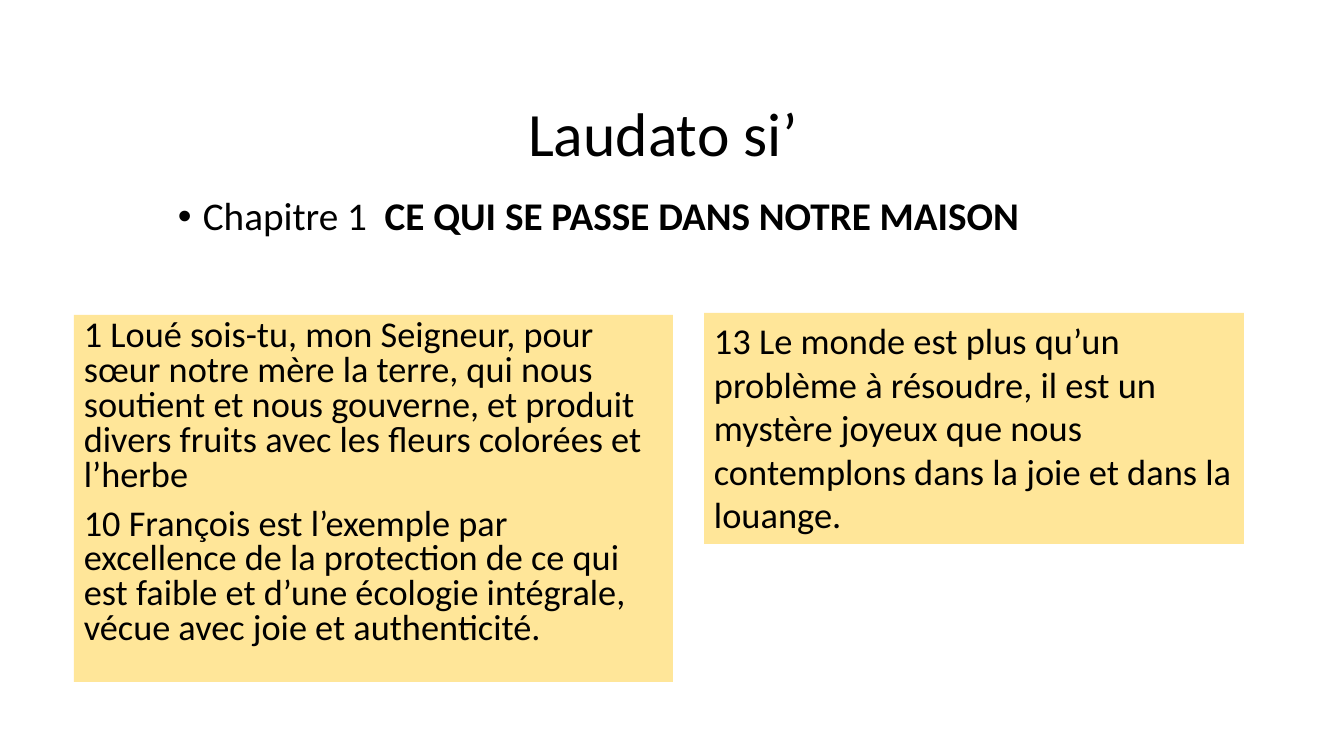
import pptx
import pptx.dml.color
import pptx.enum.shapes
import pptx.enum.text
import pptx.oxml
import pptx.util

BLACK = pptx.dml.color.RGBColor(0x00, 0x00, 0x00)
SAND = pptx.dml.color.RGBColor(0xFF, 0xE6, 0x99)
FONT = "Calibri"
EMU_PER_PX = 914400 / 100.8
SLIDE_SIZE = (1344, 756)
BULLET_INDENT = 25

TITLE = {"box": (159, 76, 1008, 122), "paragraphs": [[("Laudato si’", False)]]}
CHAPTER = {
    "box": (168, 192, 1008, 77),
    "paragraphs": [[("Chapitre 1  ", False), ("CE QUI SE PASSE DANS NOTRE MAISON", True)]],
}
QUOTES = [
    {
        "box": (74, 315, 599, 367),
        "paragraphs": [
            [("1 Loué sois-tu, mon Seigneur, pour sœur notre mère la terre, qui nous soutient "
              "et nous gouverne, et produit divers fruits avec les fleurs colorées et l’herbe", False)],
            [("10 François est l’exemple par excellence de la protection de ce qui est faible "
              "et d’une écologie intégrale, vécue avec joie et authenticité.", False)],
        ],
        "format": {"size": 25.9, "line_spacing": 0.8, "space_before": 10},
    },
    {
        "box": (704, 313, 540, 231),
        "paragraphs": [
            [("13 Le monde est plus qu’un problème à résoudre, il est un mystère joyeux que nous "
              "contemplons dans la joie et dans la louange.", False)],
        ],
        "format": {"size": 26},
    },
]


def emu(px):
    return pptx.util.Emu(round(px * EMU_PER_PX))


def write_text(shape, paragraphs, size, line_spacing=1.0, space_before=0, bullet=None,
               align=pptx.enum.text.PP_ALIGN.LEFT, anchor=pptx.enum.text.MSO_ANCHOR.TOP):
    frame = shape.text_frame
    frame.word_wrap = True
    frame.auto_size = pptx.enum.text.MSO_AUTO_SIZE.NONE
    frame.vertical_anchor = anchor
    for index, runs in enumerate(paragraphs):
        paragraph = frame.add_paragraph() if index else frame.paragraphs[0]
        paragraph.alignment = align
        paragraph.line_spacing = line_spacing
        paragraph.space_before = pptx.util.Pt(space_before)
        if bullet:
            properties = paragraph._p.get_or_add_pPr()
            properties.set("marL", str(emu(BULLET_INDENT)))
            properties.set("indent", str(-emu(BULLET_INDENT)))
            namespace = pptx.oxml.ns.nsdecls("a")
            properties.append(pptx.oxml.parse_xml(f'<a:buFont {namespace} typeface="Arial"/>'))
            properties.append(pptx.oxml.parse_xml(f'<a:buChar {namespace} char="{bullet}"/>'))
        for text, bold in runs:
            run = paragraph.add_run()
            run.text = text
            run.font.name = FONT
            run.font.size = pptx.util.Pt(size)
            run.font.bold = bold
            run.font.color.rgb = BLACK


def main():
    presentation = pptx.Presentation()
    presentation.slide_width, presentation.slide_height = map(emu, SLIDE_SIZE)
    slide = presentation.slides.add_slide(presentation.slide_layouts[5])

    title = slide.shapes.title
    title.left, title.top, title.width, title.height = map(emu, TITLE["box"])
    write_text(title, TITLE["paragraphs"], size=44, line_spacing=0.9,
               align=pptx.enum.text.PP_ALIGN.CENTER, anchor=pptx.enum.text.MSO_ANCHOR.MIDDLE)

    chapter = slide.shapes.add_textbox(*map(emu, CHAPTER["box"]))
    write_text(chapter, CHAPTER["paragraphs"], size=28, line_spacing=0.9, space_before=10, bullet="•")

    for quote in QUOTES:
        panel = slide.shapes.add_shape(
            pptx.enum.shapes.MSO_SHAPE.RECTANGLE, *map(emu, quote["box"]))
        panel.shadow.inherit = False
        panel.fill.solid()
        panel.fill.fore_color.rgb = SAND
        panel.line.fill.background()
        write_text(panel, quote["paragraphs"], **quote["format"])

    presentation.save("out.pptx")


if __name__ == "__main__":
    main()
